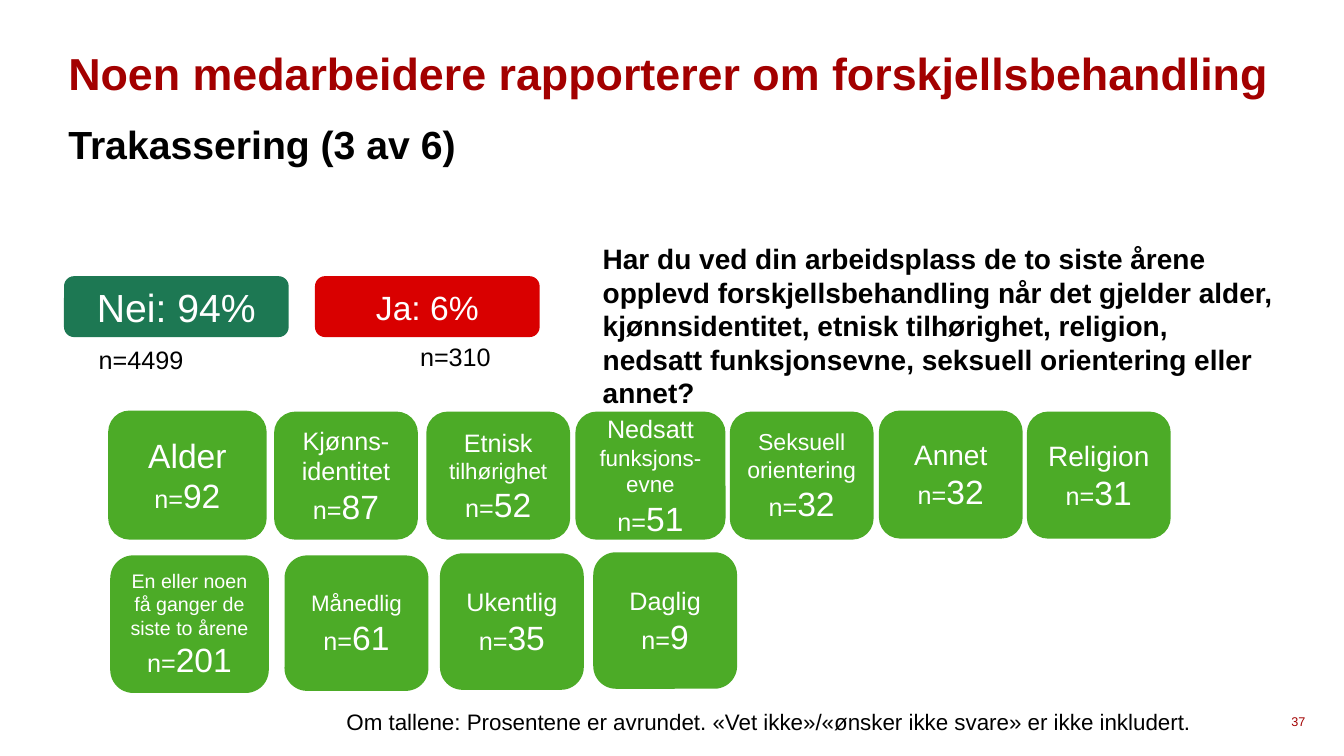
from pptx import Presentation
from pptx.dml.color import RGBColor
from pptx.enum.shapes import MSO_SHAPE as SHAPE
from pptx.enum.text import MSO_ANCHOR as ANCHOR, PP_ALIGN as ALIGN
from pptx.util import Emu, Pt

PX = 9525
COLORS = {"heading": "A30000", "black": "000000", "white": "FFFFFF",
          "no": "1D7853", "yes": "D90000", "tile": "4CAB27"}

deck = Presentation()
deck.slide_width, deck.slide_height = Emu(1280 * PX), Emu(720 * PX)
slide = deck.slides.add_slide(deck.slide_layouts[6])


def write(frame, lines, color, bold=False, align=ALIGN.LEFT):
    frame.word_wrap = True
    for i, line in enumerate(lines):
        paragraph = frame.paragraphs[0] if i == 0 else frame.add_paragraph()
        paragraph.alignment = align
        for text, size in line:
            run = paragraph.add_run()
            run.text = text
            run.font.name = "Arial"
            run.font.size = Pt(size)
            run.font.bold = bold
            run.font.color.rgb = RGBColor.from_string(COLORS[color])


def add_card(kind, box, fill, lines):
    card = slide.shapes.add_shape(kind, *[Emu(v * PX) for v in box])
    card.shadow.inherit = False
    card.fill.solid()
    card.fill.fore_color.rgb = RGBColor.from_string(COLORS[fill])
    card.line.fill.background()
    card.text_frame.vertical_anchor = ANCHOR.MIDDLE
    write(card.text_frame, lines, "white", align=ALIGN.CENTER)


question = ("Har du ved din arbeidsplass de to siste årene opplevd "
            "forskjellsbehandling når det gjelder alder, kjønnsidentitet, "
            "etnisk tilhørighet, religion, nedsatt funksjonsevne, seksuell "
            "orientering eller annet?")
footnote = ("Om tallene: Prosentene er avrundet. "
            "«Vet ikke»/«ønsker ikke svare» er ikke inkludert.")

MID, TOP = ANCHOR.MIDDLE, ANCHOR.TOP
texts = [
    ("Noen medarbeidere rapporterer om forskjellsbehandling",
     (65, 24, 1149, 90), 32, "heading", True, MID, 0),
    ("Trakassering (3 av 6)", (65, 115, 1149, 68), 28, "black", True, TOP, 0),
    (question, (574, 230, 640, 93), 20, "black", True, TOP, 0),
    ("n=4499", (84, 323, 106, 38), 18, "black", False, TOP, 1),
    ("n=310", (390, 320, 106, 38), 18, "black", False, TOP, 1),
    (footnote, (320, 669, 833, 36), 16, "black", False, TOP, 1),
    ("37", (1230, 676, 36, 22), 9, "heading", False, MID, 0),
]
for text, box, size, color, bold, anchor, inset in texts:
    frame = slide.shapes.add_textbox(*[Emu(v * PX) for v in box]).text_frame
    frame.vertical_anchor = anchor
    frame.margin_left = frame.margin_right = Emu(inset * 10 * PX)
    frame.margin_top = frame.margin_bottom = Emu(inset * 5 * PX)
    write(frame, [[(text, size)]], color, bold)

for answer, size, left, fill in [("Nei: 94%", 28, 61, "no"), ("Ja: 6%", 24, 300, "yes")]:
    add_card(SHAPE.ROUNDED_RECTANGLE, (left, 263, 214, 58), fill, [[(answer, size)]])

WIDE, ROUND = SHAPE.FLOWCHART_ALTERNATE_PROCESS, SHAPE.ROUNDED_RECTANGLE
grounds = [
    (WIDE, (103, 391, 151, 123), [("Alder", 24)], 92),
    (ROUND, (261, 392, 137, 122), [("Kjønns-", 18), ("identitet", 18)], 87),
    (ROUND, (406, 392, 137, 122), [("Etnisk", 18), ("tilhørighet", 16)], 52),
    (ROUND, (548, 392, 143, 122), [("Nedsatt", 18), ("funksjons-evne", 16)], 51),
    (ROUND, (695, 392, 137, 122), [("Seksuell orientering", 16.5)], 32),
    (ROUND, (837, 391, 137, 122), [("Annet", 20)], 32),
    (ROUND, (978, 392, 137, 121), [("Religion", 20)], 31),
]
frequencies = [
    (WIDE, (105, 529, 151, 131), [("En eller noen få ganger de siste to årene", 14)], 201),
    (ROUND, (271, 529, 137, 129), [("Månedlig", 16)], 61),
    (ROUND, (419, 527, 137, 130), [("Ukentlig", 18)], 35),
    (ROUND, (565, 526, 137, 130), [("Daglig", 18)], 9),
]
for kind, box, labels, count in grounds + frequencies:
    lines = [[label] for label in labels] + [[("n=", 18), (str(count), 24)]]
    add_card(kind, box, "tile", lines)

deck.save("out.pptx")
